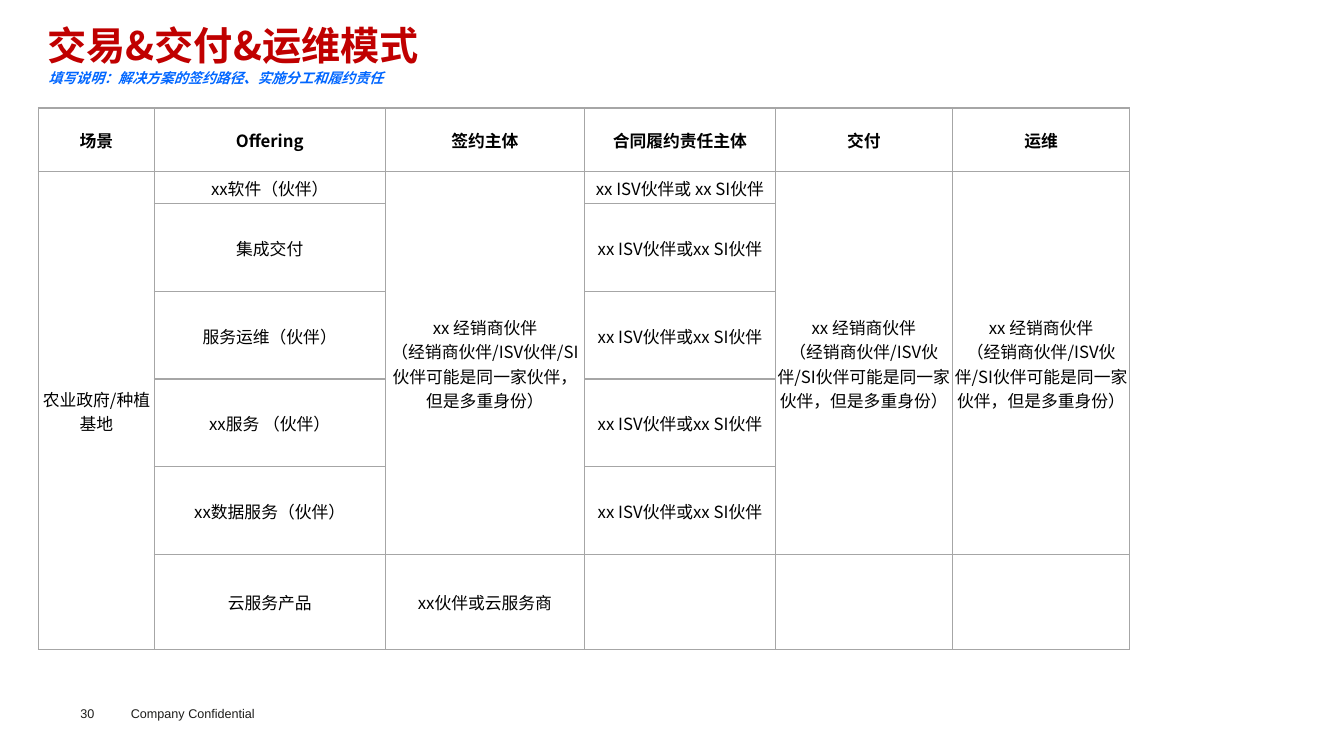
from lxml import etree
from pptx import Presentation
from pptx.dml import color
from pptx.enum import text
from pptx.oxml import ns
from pptx.util import Cm, Pt

CJK = "Noto Sans CJK SC"
DEALER = "xx 经销商伙伴\n（经销商伙伴/ISV伙伴/SI伙伴可能是同一家伙伴，但是多重身份）"
DUTY = "xx ISV伙伴或xx SI伙伴"
COLS = [2.92, 5.82, 5.03, 4.8, 4.47, 4.47]
ROWS = [1.6, 0.81, 2.21, 2.21, 2.21, 2.21, 2.39]
HEADER = ["场景", "Offering", "签约主体", "合同履约责任主体", "交付", "运维"]
OFFERINGS = ["xx软件（伙伴）", "集成交付", "服务运维（伙伴）", "xx服务 （伙伴）",
             "xx数据服务（伙伴）", "云服务产品"]
DUTIES = ["xx ISV伙伴或 xx SI伙伴"] + [DUTY] * 4


def rgb(value):
    return color.RGBColor.from_string(value)


def write(tf, content, size=12, name=CJK, fill="000000", bold=False,
          italic=False, align=text.PP_ALIGN.LEFT):
    for i, line in enumerate(content.split("\n")):
        p = tf.paragraphs[0] if i == 0 else tf.add_paragraph()
        p.alignment = align
        r = p.add_run()
        r.text = line
        f = r.font
        f.size, f.name, f.bold, f.italic = Pt(size), name, bold, italic
        f.color.rgb = rgb(fill)
        ea = etree.Element(ns.qn("a:ea"), typeface=name)
        f._element.find(ns.qn("a:latin")).addnext(ea)


def add_text(s, content, box, margins=(0.25, 0.13), wrap=True, **fmt):
    tf = s.shapes.add_textbox(*map(Cm, box)).text_frame
    tf.word_wrap = wrap
    tf.margin_left = tf.margin_right = Cm(margins[0])
    tf.margin_top = tf.margin_bottom = Cm(margins[1])
    write(tf, content, **fmt)


def add_title(s, content):
    sp = s.shapes.title
    sp.left, sp.top, sp.width, sp.height = map(Cm, (0.97, 0.05, 29.85, 2.16))
    tf = sp.text_frame
    tf.auto_size = text.MSO_AUTO_SIZE.NONE
    tf.vertical_anchor = text.MSO_ANCHOR.MIDDLE
    tf.margin_left = tf.margin_right = Cm(0.23)
    tf.margin_top = tf.margin_bottom = Cm(0.1)
    write(tf, content, size=28, fill="C00000", bold=True)


def add_borders(cell, value):
    tcPr = cell._tc.get_or_add_tcPr()
    for i, side in enumerate(("lnL", "lnR", "lnT", "lnB")):
        ln = etree.Element(ns.qn(f"a:{side}"), w=str(Pt(1)))
        fill = etree.SubElement(ln, ns.qn("a:solidFill"))
        etree.SubElement(fill, ns.qn("a:srgbClr"), val=value)
        tcPr.insert(i, ln)


def add_grid(s):
    frame = s.shapes.add_table(len(ROWS), len(COLS), Cm(0.97), Cm(2.72),
                               Cm(sum(COLS)), Cm(sum(ROWS)))
    tbl = frame.table
    for col, width in zip(tbl.columns, COLS):
        col.width = Cm(width)
    for row, height in zip(tbl.rows, ROWS):
        row.height = Cm(height)
    for cell in tbl.iter_cells():
        cell.margin_left = cell.margin_right = cell.margin_top = Cm(0.03)
        cell.margin_bottom = 0
        cell.vertical_anchor = text.MSO_ANCHOR.MIDDLE
        cell.fill.background()
        add_borders(cell, "A6A6A6")

    def put(row, col, content, **fmt):
        write(tbl.cell(row, col).text_frame, content,
              align=text.PP_ALIGN.CENTER, **fmt)

    for col, content in enumerate(HEADER):
        put(0, col, content, bold=True)
    for col, items in ((1, OFFERINGS), (3, DUTIES)):
        for row, content in enumerate(items, 1):
            put(row, col, content)
    put(6, 2, "xx伙伴或云服务商")
    for col, last, content in ((0, 6, "农业政府/种植基地"), (2, 5, DEALER),
                               (4, 5, DEALER), (5, 5, DEALER)):
        tbl.cell(1, col).merge(tbl.cell(last, col))
        put(1, col, content)


def main():
    prs = Presentation()
    prs.slide_width, prs.slide_height = Cm(33.88), Cm(19.05)
    s = prs.slides.add_slide(prs.slide_layouts[5])
    add_title(s, "交易&交付&运维模式")
    add_grid(s)
    add_text(s, "填写说明：解决方案的签约路径、实施分工和履约责任",
             (0.97, 1.63, 9.42, 0.69), wrap=False, size=10, fill="0066FF",
             bold=True, italic=True)
    footer = dict(size=9, name="Arial", fill="1D1D1B")
    add_text(s, "Company Confidential", (3.05, 17.65, 4.06, 0.64), **footer)
    add_text(s, "30", (2.03, 17.78, 1.4, 0.38), margins=(0, 0), **footer)
    prs.save("out.pptx")


if __name__ == "__main__":
    main()
